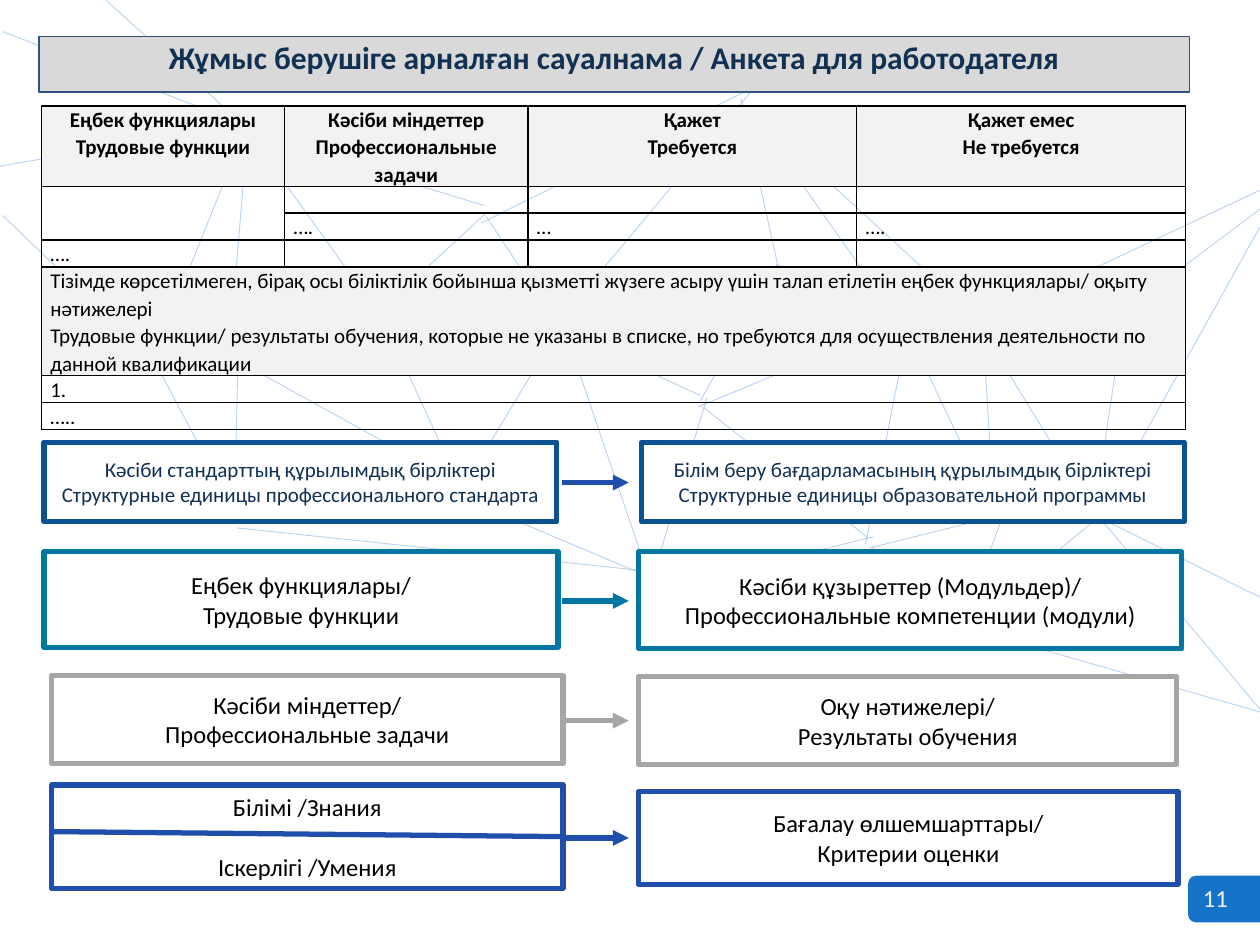
from lxml import etree
from pptx import Presentation
from pptx.dml.color import RGBColor
from pptx.enum.shapes import MSO_CONNECTOR, MSO_SHAPE
from pptx.enum.text import MSO_ANCHOR, PP_ALIGN
from pptx.oxml.ns import qn
from pptx.util import Inches, Pt

STRAIGHT = MSO_CONNECTOR.STRAIGHT
RECTANGLE = MSO_SHAPE.RECTANGLE
TAB = MSO_SHAPE.ROUND_2_SAME_RECTANGLE
TOP, MIDDLE = MSO_ANCHOR.TOP, MSO_ANCHOR.MIDDLE
LEFT, CENTER = PP_ALIGN.LEFT, PP_ALIGN.CENTER

BLACK = RGBColor(0x00, 0x00, 0x00)
WHITE = RGBColor(0xFF, 0xFF, 0xFF)
OFF_WHITE = RGBColor(0xF2, 0xF2, 0xF2)
LIGHT_GRAY = RGBColor(0xD9, 0xD9, 0xD9)
GRAY = RGBColor(0xA6, 0xA6, 0xA6)
NAVY = RGBColor(0x11, 0x30, 0x52)
STEEL = RGBColor(0x30, 0x54, 0x80)
DEEP_BLUE = RGBColor(0x0B, 0x52, 0x92)
TEAL = RGBColor(0x00, 0x76, 0xA3)
ROYAL_BLUE = RGBColor(0x1F, 0x4E, 0xAB)
TAB_BLUE = RGBColor(0x0F, 0x6F, 0xC6)
MESH_BLUE = RGBColor(0x82, 0xB1, 0xE5)

MESH = [
    (0.84, 0, 1.92, 0.98), (0.02, 0.25, 1.92, 0.98), (0, 1.32, 1.92, 0.98),
    (1.19, 2.91, 1.97, 0.97), (0.02, 1.71, 1.22, 2.86), (1.97, 0.99, 1.82, 2.79),
    (1.23, 2.92, 1.87, 2.78), (1.95, 1.02, 2.97, 2.44), (1.85, 2.84, 3.03, 2.45),
    (1.93, 1.05, 3.84, 1.63), (2.97, 2.51, 3.87, 1.68), (1.89, 2.81, 1.86, 4.08),
    (1.26, 2.93, 1.86, 4.06), (3.67, 3.85, 1.88, 2.86), (3.66, 3.88, 3.03, 2.51),
    (3.7, 3.85, 1.87, 4.14), (4.41, 2.55, 3.86, 1.72), (2.99, 2.53, 4.44, 2.53),
    (3.64, 3.93, 4.47, 2.55), (5.16, 4.61, 4.48, 2.61), (5.2, 4.6, 3.69, 3.96),
    (5.21, 4.54, 1.88, 4.19), (5.16, 4.65, 5.61, 3.16), (5.56, 3.14, 4.42, 2.61),
    (5.93, 0.72, 3.82, 1.77), (5.95, 0.74, 4.38, 2.62), (6.17, 2.09, 5.56, 3.18),
    (5.93, 0.84, 7.13, 2.55), (5.54, 3.23, 7.2, 2.54), (5.93, 0.85, 7.73, 2.5),
    (6.87, 4.32, 7.21, 2.59), (6.89, 4.27, 5.58, 3.23), (6.93, 4.26, 5.18, 4.7),
    (7.77, 2.55, 7.17, 2.61), (7.9, 4.09, 7.2, 2.62), (7.8, 2.59, 7.89, 4.11),
    (7.94, 4.09, 6.9, 4.35), (7.64, 4.96, 6.92, 4.34), (7.63, 4.99, 7.95, 4.12),
    (7.75, 2.57, 10, 1.51), (8.88, 2.5, 10, 1.66), (8.72, 4.1, 10, 1.8),
    (8.89, 2.46, 7.75, 2.6), (8.92, 2.5, 8.68, 4.1), (7.79, 2.61, 8.69, 4.08),
    (7.93, 4.15, 8.73, 4.08), (7.62, 5.01, 8.75, 4.08), (8.72, 4.1, 10, 5.63),
    (8.71, 4.1, 10, 4.74), (7.66, 4.98, 10, 5.65), (5.88, 0.78, 6.17, 2.09),
    (6.17, 2.1, 7.17, 2.6), (4.45, 2.56, 6.17, 2.11),
]

COLUMNS = [1.93, 1.93, 2.61, 2.61]
ROWS = [0.64, 0.21, 0.21, 0.21, 0.86, 0.21, 0.21]
HEADERS = [
    ["Еңбек функциялары", "Трудовые функции"],
    ["Кәсіби міндеттер", "Профессиональные задачи"],
    ["Қажет", "Требуется"],
    ["Қажет емес", "Не требуется"],
]
CELLS = {
    (2, 1): ["…."], (2, 2): ["…"], (2, 3): ["…."], (3, 0): ["…."],
    (4, 0): [
        "Тізімде көрсетілмеген, бірақ осы біліктілік бойынша қызметті жүзеге асыру "
        "үшін талап етілетін еңбек функциялары/ оқыту нәтижелері",
        "Трудовые функции/ результаты обучения, которые не указаны в списке, но "
        "требуются для осуществления деятельности по данной квалификации",
    ],
    (5, 0): ["1."], (6, 0): ["….."],
}
CELLS.update({(0, column): lines for column, lines in enumerate(HEADERS)})
MERGES = [(1, 0, 2, 0)] + [(row, 0, row, 3) for row in (4, 5, 6)]
SHADED_ROWS = (0, 4)

BOXES = [
    (0.35, 3.51, 4.07, 0.63, DEEP_BLUE, 12, NAVY, 0,
     ["Кәсіби стандарттың құрылымдық бірліктері",
      "Структурные единицы профессионального стандарта"]),
    (5.09, 3.51, 4.31, 0.63, DEEP_BLUE, 12, NAVY, 0,
     ["Білім беру бағдарламасының құрылымдық бірліктері",
      "Структурные единицы образовательной программы"]),
    (0.35, 4.38, 4.08, 0.76, TEAL, 14, BLACK, 0,
     ["Еңбек функциялары/", "Трудовые функции"]),
    (5.07, 4.38, 4.31, 0.77, TEAL, 14, BLACK, 0,
     ["Кәсіби құзыреттер (Модульдер)/", "Профессиональные компетенции (модули)"]),
    (0.41, 5.36, 4.06, 0.7, GRAY, 14, BLACK, 0,
     ["Кәсіби міндеттер/", "Профессиональные задачи"]),
    (5.07, 5.37, 4.27, 0.7, GRAY, 14, BLACK, 0,
     ["Оқу нәтижелері/", "Результаты обучения"]),
    (0.41, 6.23, 4.06, 0.82, ROYAL_BLUE, 14, BLACK, 17,
     ["Білімі /Знания", "Іскерлігі /Умения"]),
    (5.07, 6.28, 4.28, 0.74, ROYAL_BLUE, 14, BLACK, 0,
     ["Бағалау өлшемшарттары/", "Критерии оценки"]),
]
ARROWS = [(4.77, TEAL), (5.72, GRAY), (6.65, ROYAL_BLUE), (3.83, ROYAL_BLUE)]


class SlideBuilder:
    font = "Calibri"

    def __init__(self, slide):
        self.slide = slide

    def add_text(self, frame, lines, size, color, bold=False, align=CENTER, spacing=1.0, gap=0):
        frame.word_wrap = True
        for index, line in enumerate(lines):
            paragraph = frame.add_paragraph() if index else frame.paragraphs[0]
            paragraph.alignment = align
            paragraph.line_spacing = spacing
            paragraph.space_before = Pt(gap if index else 0)
            run = paragraph.add_run()
            run.text = line
            run.font.name = self.font
            run.font.size = Pt(size)
            run.font.bold = bold
            run.font.color.rgb = color

    def set_alpha(self, element, percent):
        color = next(element.iter(qn("a:srgbClr")))
        etree.SubElement(color, qn("a:alpha"), val=str(percent * 1000))

    def line(self, x1, y1, x2, y2, color, width, alpha=None, arrow=False):
        connector = self.slide.shapes.add_connector(
            STRAIGHT, Inches(x1), Inches(y1), Inches(x2), Inches(y2))
        connector.line.color.rgb = color
        connector.line.width = Pt(width)
        properties = connector._element.spPr
        outline = properties.find(qn("a:ln"))
        if alpha:
            self.set_alpha(outline, alpha)
        if arrow:
            etree.SubElement(outline, qn("a:tailEnd"), type="triangle")
        etree.SubElement(properties, qn("a:effectLst"))

    def shape(self, kind, x, y, width, height, fill, line=None, line_width=0):
        shape = self.slide.shapes.add_shape(
            kind, Inches(x), Inches(y), Inches(width), Inches(height))
        shape.shadow.inherit = False
        shape.fill.solid()
        shape.fill.fore_color.rgb = fill
        if line is None:
            shape.line.fill.background()
        else:
            shape.line.color.rgb = line
            shape.line.width = Pt(line_width)
        return shape

    def box(self, x, y, width, height, line, size, color, gap, lines):
        shape = self.shape(RECTANGLE, x, y, width, height, WHITE, line, 3)
        shape.text_frame.vertical_anchor = MIDDLE
        self.add_text(shape.text_frame, lines, size, color, gap=gap)

    def title(self, text):
        shape = self.shape(RECTANGLE, 0.31, 0.29, 9.13, 0.44, LIGHT_GRAY, STEEL, 0.75)
        shape.text_frame.vertical_anchor = TOP
        self.add_text(shape.text_frame, [text], 18, NAVY, bold=True, spacing=0.9)

    def page_number(self, number):
        tab = self.shape(TAB, 9.53, 6.85, 0.37, 0.57, TAB_BLUE)
        tab.rotation = 270
        self.set_alpha(tab._element.spPr, 97)
        label = self.slide.shapes.add_textbox(
            Inches(9.39), Inches(6.96), Inches(0.51), Inches(0.34))
        self.add_text(label.text_frame, [number], 14, OFF_WHITE)

    def borders(self, cell):
        properties = cell._tc.get_or_add_tcPr()
        for index, side in enumerate(("a:lnL", "a:lnR", "a:lnT", "a:lnB")):
            border = etree.Element(qn(side), w=str(Pt(1)))
            fill = etree.SubElement(border, qn("a:solidFill"))
            etree.SubElement(fill, qn("a:srgbClr"), val=str(BLACK))
            properties.insert(index, border)

    def table(self, x, y):
        table = self.slide.shapes.add_table(
            len(ROWS), len(COLUMNS), Inches(x), Inches(y),
            Inches(sum(COLUMNS)), Inches(sum(ROWS))).table
        table.first_row = table.horz_banding = False
        for column, width in zip(table.columns, COLUMNS):
            column.width = Inches(width)
        for row_index, height in enumerate(ROWS):
            table.rows[row_index].height = Inches(height)
            for column_index in range(len(COLUMNS)):
                cell = table.cell(row_index, column_index)
                cell.margin_left = cell.margin_right = Inches(0.07)
                cell.margin_top = cell.margin_bottom = 0
                if row_index in SHADED_ROWS:
                    cell.fill.solid()
                    cell.fill.fore_color.rgb = OFF_WHITE
                else:
                    cell.fill.background()
                self.borders(cell)
                header = row_index == 0
                lines = CELLS.get((row_index, column_index), [])
                if lines:
                    self.add_text(cell.text_frame, lines, 12, BLACK, bold=header,
                                  align=CENTER if header else LEFT, spacing=1.07)
                else:
                    paragraph = cell.text_frame.paragraphs[0]
                    paragraph.line_spacing = 1.07
                    etree.SubElement(paragraph._p, qn("a:endParaRPr"), sz="1200")
        for top, left, bottom, right in MERGES:
            table.cell(top, left).merge(table.cell(bottom, right))


def main():
    presentation = Presentation()
    presentation.slide_width, presentation.slide_height = Inches(10), Inches(7.5)
    builder = SlideBuilder(presentation.slides.add_slide(presentation.slide_layouts[6]))
    for points in MESH:
        builder.line(*points, MESH_BLUE, 0.5, alpha=56)
    builder.page_number("11")
    builder.title("Жұмыс берушіге арналған сауалнама / Анкета для работодателя")
    builder.table(0.33, 0.84)
    for box in BOXES:
        builder.box(*box)
    builder.line(0.41, 6.6, 4.46, 6.64, ROYAL_BLUE, 3)
    for y, color in ARROWS:
        builder.line(4.46, y, 4.99, y, color, 3, arrow=True)
    presentation.save("out.pptx")


if __name__ == "__main__":
    main()
